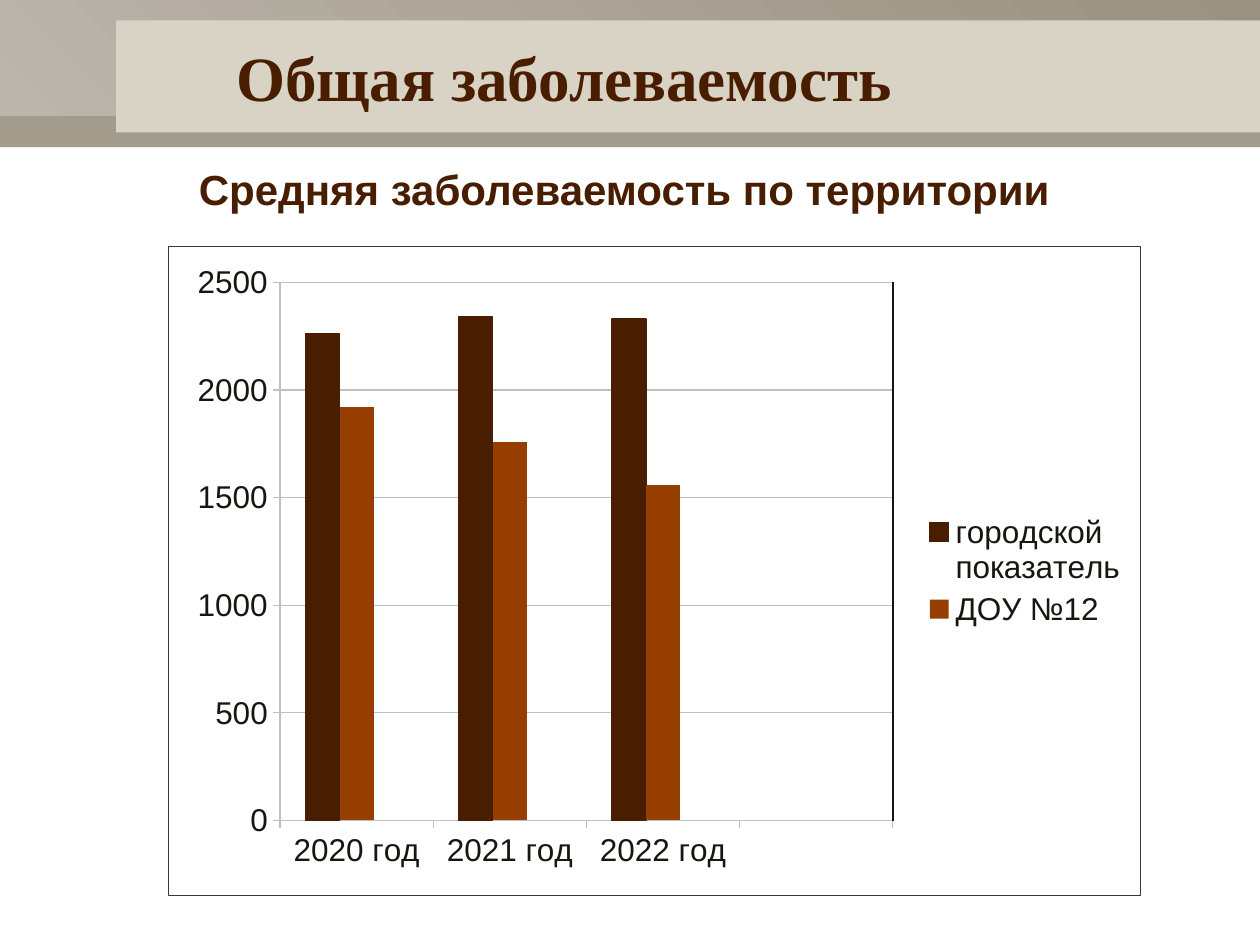
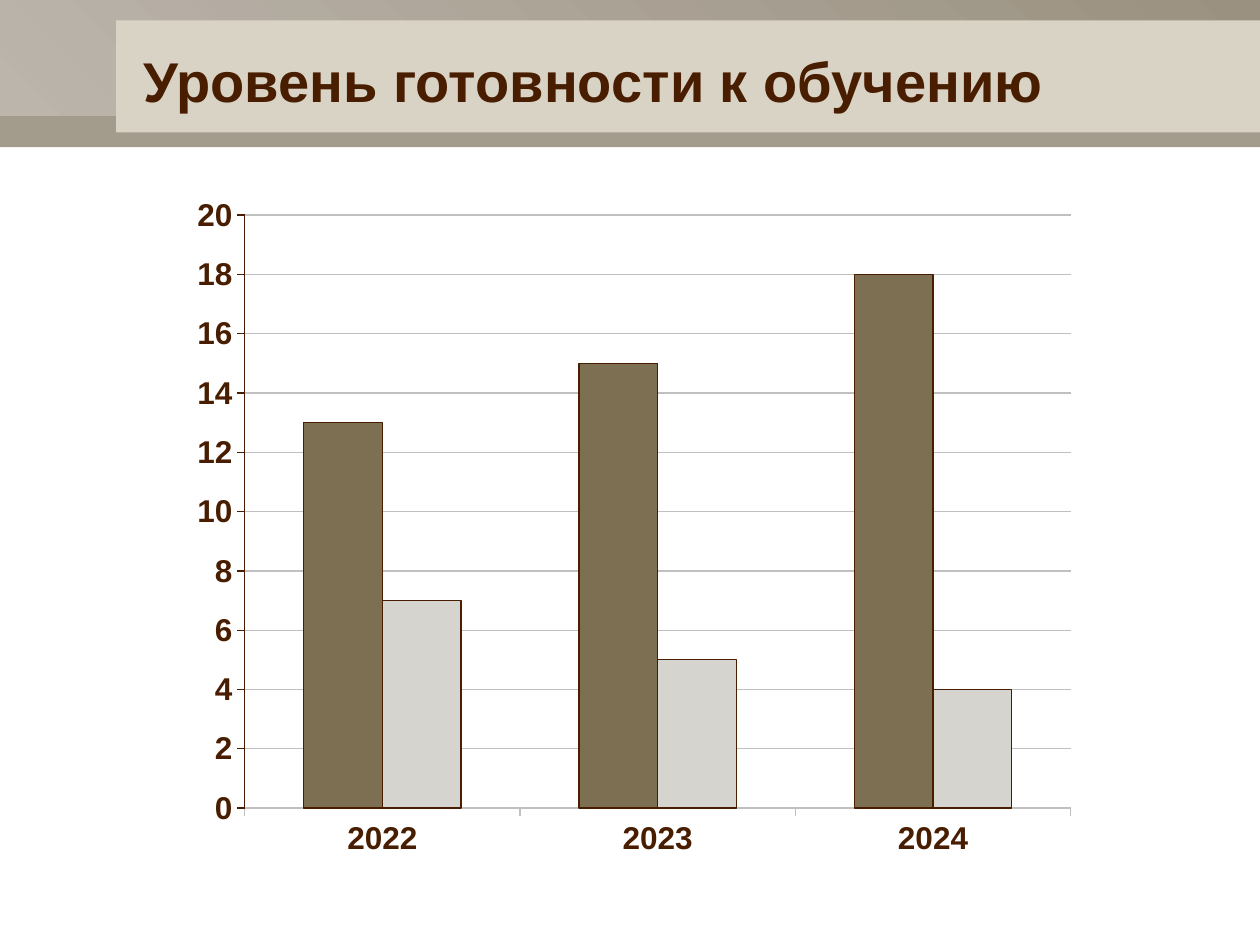
from lxml import etree
from pptx import Presentation
from pptx import util as u
from pptx.chart.data import CategoryChartData
from pptx.dml.color import RGBColor
from pptx.enum import chart as charts, shapes, text
from pptx.oxml import parse_xml
from pptx.oxml.ns import nsdecls, qn

# Shared colours, formats and sizes
BROWN = RGBColor(0x48, 0x1D, 0x00)
RUST = RGBColor(0x96, 0x3D, 0x00)
CREAM = RGBColor(0xE9, 0xE6, 0xDF)
OLIVE = RGBColor(0x7D, 0x70, 0x52)
PALE_GREY = RGBColor(0xD6, 0xD4, 0xCF)
GRID = RGBColor(0xC0, 0xC0, 0xC0)
INK = RGBColor(0x19, 0x16, 0x10)
FRAME = RGBColor(0x3F, 0x38, 0x29)
TAUPE = RGBColor(0x9A, 0x91, 0x80)
LIGHT_TAUPE = RGBColor(0xBC, 0xB5, 0xAC)
BEIGE = RGBColor(0xD9, 0xD3, 0xC5)

SERIF_TITLE = {"name": "Times New Roman", "size": u.Pt(36), "bold": True}
SANS_TITLE = {"name": "Arial", "size": u.Pt(32), "bold": True}
SUBTITLE = {"name": "Arial", "size": u.Pt(24), "bold": True}
CHART_TEXT = {"name": "Arial", "size": u.Pt(18), "bold": False}
BOLD_CHART_TEXT = {**CHART_TEXT, "bold": True}

LINE_WIDTH = u.Pt(0.75)
PAGE_WIDTH, PAGE_HEIGHT = 25.4, 19.05
PANEL_LEFT = 2.34


def place(*lengths):
    return [u.Cm(length) for length in lengths]


def set_values(target, values):
    for name, value in values.items():
        setattr(target, name, value)


def set_font(font, color, values):
    set_values(font, values)
    font.color.rgb = color


def set_line(line, color):
    set_values(line, {"width": LINE_WIDTH})
    line.color.rgb = color


# Header bands, shared through the slide master
def add_band(page, box, color):
    band = page.shapes.add_shape(shapes.MSO_SHAPE.RECTANGLE, *place(*box))
    band.shadow.inherit = False
    band.line.fill.background()
    band.fill.solid()
    band.fill.fore_color.rgb = color
    return band


def set_opacity(band, percent):
    color = band.element.spPr.find(f"{qn('a:solidFill')}/{qn('a:srgbClr')}")
    etree.SubElement(color, qn("a:alpha"), val=str(percent * 1000))


def set_gradient(band, angle, colors):
    band.fill.gradient()
    band.fill.gradient_angle = angle
    for position, (stop, color) in enumerate(zip(band.fill.gradient_stops, colors)):
        stop.color.rgb = color
        stop.position = position


def add_header(deck, page):
    strip = add_band(page, (0, 1.9, PAGE_WIDTH, 1.07), TAUPE)
    set_opacity(strip, 90)
    backdrop = add_band(page, (0, 0, PAGE_WIDTH, 2.34), TAUPE)
    set_gradient(backdrop, 45, (LIGHT_TAUPE, TAUPE))
    panel = add_band(page, (PANEL_LEFT, 0.41, PAGE_WIDTH - PANEL_LEFT, 2.26), BEIGE)

    # Bands are drawn on a page, then moved behind the master's placeholders
    master_tree = deck.slide_master.shapes.element
    for index, band in enumerate((strip, backdrop, panel), start=2):
        master_tree.insert(index, band.element)


# Text
def write(box, words, align, font):
    set_values(box.text_frame, {"word_wrap": True,
                                "auto_size": text.MSO_AUTO_SIZE.NONE})
    para = box.text_frame.paragraphs[0]
    para.alignment = align
    span = para.add_run()
    span.text = words
    set_font(span.font, BROWN, font)


def add_title(page, words, box, align, font):
    title = page.shapes.title
    set_values(title, dict(zip(("left", "top", "width", "height"), place(*box))))
    title.text_frame.vertical_anchor = text.MSO_ANCHOR.MIDDLE
    write(title, words, align, font)


# Charts
def add_columns(page, box, categories, series):
    """Each series is (name, values, fill colour, outline colour or None)."""
    data = CategoryChartData()
    data.categories = categories
    for name, values, _, _ in series:
        data.add_series(name, values)
    chart = page.shapes.add_chart(charts.XL_CHART_TYPE.COLUMN_CLUSTERED,
                                  *place(*box), data).chart
    set_values(chart, {"has_title": False, "has_legend": False})

    plot = chart.plots[0]
    set_values(plot, {"gap_width": 150, "overlap": 0, "vary_by_categories": False})
    for columns, (_, _, fill, outline) in zip(plot.series, series):
        columns.format.fill.solid()
        columns.format.fill.fore_color.rgb = fill
        if outline:
            set_line(columns.format.line, outline)
    return chart


def style_axes(chart, top, step, color, value_line, font):
    set_font(chart.font, color, font)
    values = chart.value_axis
    set_values(values, {"minimum_scale": 0, "maximum_scale": top,
                        "major_unit": step, "has_major_gridlines": True})
    set_line(values.major_gridlines.format.line, GRID)
    for axis, line_color in ((values, value_line), (chart.category_axis, GRID)):
        set_values(axis, {"major_tick_mark": charts.XL_TICK_MARK.OUTSIDE,
                          "minor_tick_mark": charts.XL_TICK_MARK.NONE})
        set_line(axis.format.line, line_color)
        set_font(axis.tick_labels.font, color, font)


def set_plot_layout(chart, fractions):
    """Place the inner plot area: x, y, width, height as parts of the chart."""
    area = chart.element.find(f".//{qn('c:plotArea')}")
    for default in area.findall(qn("c:layout")):
        area.remove(default)
    settings = {"layoutTarget": "inner", "xMode": "edge", "yMode": "edge",
                **dict(zip("xywh", fractions))}
    items = "".join(f'<c:{tag} val="{value}"/>' for tag, value in settings.items())
    area.insert(0, parse_xml(f"<c:layout {nsdecls('c')}><c:manualLayout>{items}"
                             "</c:manualLayout></c:layout>"))


def add_legend(chart, hidden_index):
    chart.has_legend = True
    set_values(chart.legend, {"position": charts.XL_LEGEND_POSITION.RIGHT,
                              "include_in_layout": False})
    position = chart.element.find(f".//{qn('c:legendPos')}")
    position.addnext(parse_xml(
        f'<c:legendEntry {nsdecls("c")}><c:idx val="{hidden_index}"/>'
        '<c:delete val="1"/></c:legendEntry>'))


def add_frame(chart, color):
    chart.element.find(qn("c:chart")).addnext(parse_xml(
        f'<c:spPr {nsdecls("c", "a")}><a:noFill/><a:ln w="{LINE_WIDTH}">'
        f'<a:solidFill><a:srgbClr val="{color}"/></a:solidFill></a:ln></c:spPr>'))


def add_plot_edge(page, box, fractions, color):
    """Draw a line down the right side of a chart's plot area."""
    left, top, width, height = box
    plot_x, plot_y, plot_width, plot_height = fractions
    x = left + width * (plot_x + plot_width)
    y = top + height * plot_y
    edge = page.shapes.add_connector(shapes.MSO_CONNECTOR.STRAIGHT,
                                     *place(x, y, x, y + height * plot_height))
    set_line(edge.line, color)
    etree.SubElement(edge.element.spPr, qn("a:effectLst"))


# Slides
def build_morbidity(page):
    add_title(page, "Общая заболеваемость", (2.77, 0.58, 17.2, 1.9),
              text.PP_ALIGN.CENTER, SERIF_TITLE)

    chart_box = (3.38, 4.95, 19.63, 13.11)
    plot_part = (0.115, 0.056, 0.63, 0.829)
    categories = ["2020 год", "2021 год", "2022 год", ""]
    series = [
        ("городской показатель", (2260, 2340, 2330, None), BROWN, BROWN),
        ("ДОУ №12", (1920, 1760, 1560, None), RUST, None),
        ("Series 3", (None, None, None, None), CREAM, None),
    ]
    chart = add_columns(page, chart_box, categories, series)
    style_axes(chart, 2500, 500, INK, GRID, CHART_TEXT)
    set_plot_layout(chart, plot_part)
    add_legend(chart, hidden_index=2)
    add_frame(chart, FRAME)
    add_plot_edge(page, chart_box, plot_part, INK)

    subtitle = page.shapes.add_textbox(*place(3.76, 3.18, 18.06, 1.27))
    write(subtitle, "Средняя заболеваемость по территории",
          text.PP_ALIGN.LEFT, SUBTITLE)


def build_readiness(page):
    add_title(page, "Уровень готовности к обучению", (2.64, 0.66, 21.59, 1.9),
              text.PP_ALIGN.LEFT, SANS_TITLE)

    series = [
        ("Series 1", (13, 15, 18), OLIVE, BROWN),
        ("Series 2", (7, 5, 4), PALE_GREY, BROWN),
    ]
    chart = add_columns(page, (0.99, 3.58, 23.62, 14.3),
                        ["2022", "2023", "2024"], series)
    style_axes(chart, 20, 2, BROWN, BROWN, BOLD_CHART_TEXT)
    set_plot_layout(chart, (0.167, 0.053, 0.705, 0.836))


def main():
    deck = Presentation()
    deck.slide_width, deck.slide_height = place(PAGE_WIDTH, PAGE_HEIGHT)
    title_only = deck.slide_layouts[5]
    builders = (build_morbidity, build_readiness)
    pages = [deck.slides.add_slide(title_only) for _ in builders]
    add_header(deck, pages[0])
    for build, page in zip(builders, pages):
        build(page)
    deck.save("out.pptx")


if __name__ == "__main__":
    main()
